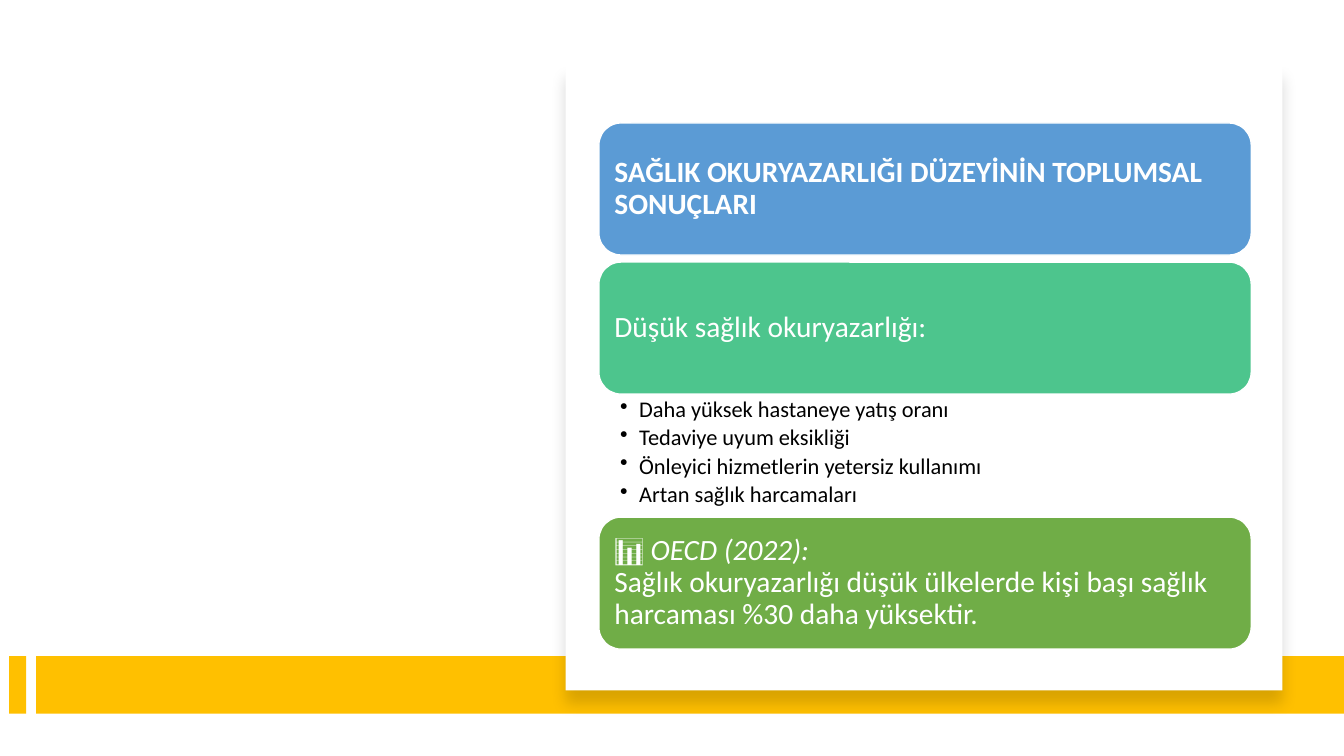
from dataclasses import dataclass

from lxml import etree
from pptx import Presentation
from pptx.dml.color import RGBColor
from pptx.enum.shapes import MSO_SHAPE
from pptx.enum.text import MSO_ANCHOR, PP_ALIGN
from pptx.oxml import parse_xml
from pptx.oxml.ns import nsdecls, qn
from pptx.util import Inches, Pt

RECTANGLE, ROUNDED = MSO_SHAPE.RECTANGLE, MSO_SHAPE.ROUNDED_RECTANGLE
TOP, MIDDLE = MSO_ANCHOR.TOP, MSO_ANCHOR.MIDDLE
LEFT = PP_ALIGN.LEFT


@dataclass(frozen=True)
class Theme:
    """Colours, font and type sizes of the slide."""
    font: str = "Calibri"
    white: str = "FFFFFF"
    black: str = "000000"
    gold: str = "FFC000"
    blue: str = "5B9BD5"
    teal: str = "4DC58D"
    green: str = "70AD47"
    heading_size: int = 21
    bullet_size: int = 16


THEME = Theme()
CARD_LEFT, CARD_WIDTH, CARD_HEIGHT = 5.94, 6.47, 1.31
BAND_TOP, BAND_HEIGHT = 6.51, 0.57
BULLETS = [
    "Daha yüksek hastaneye yatış oranı",
    "Tedaviye uyum eksikliği",
    "Önleyici hizmetlerin yetersiz kullanımı",
    "Artan sağlık harcamaları",
]
CARDS = [
    (1.22, THEME.blue, [("SAĞLIK OKURYAZARLIĞI DÜZEYİNİN TOPLUMSAL SONUÇLARI", {"bold": True})]),
    (2.6, THEME.teal, [("Düşük sağlık okuryazarlığı:", {})]),
    (5.13, THEME.green, [
        ("📊 ", {}),
        ("OECD (2022):", {"italic": True, "line_break": True}),
        ("Sağlık okuryazarlığı düşük ülkelerde kişi başı sağlık harcaması %30 daha yüksektir.", {}),
    ]),
]


def add_text(paragraph, text, size, color, bold=False, italic=False, line_break=False):
    """Append a formatted run to a paragraph."""
    run = paragraph.add_run()
    run.text = text
    run.font.name = THEME.font
    run.font.size = Pt(size)
    run.font.bold = bold
    run.font.italic = italic
    run.font.color.rgb = RGBColor.from_string(color)
    if line_break:
        paragraph.add_line_break()


def set_frame(frame, anchor, left, top, right, bottom):
    """Set wrapping, anchor and margins of a text frame."""
    frame.word_wrap = True
    frame.vertical_anchor = anchor
    frame.margin_left, frame.margin_top = Inches(left), Inches(top)
    frame.margin_right, frame.margin_bottom = Inches(right), Inches(bottom)


class SlideBuilder:
    """Draws styled elements on one slide."""

    def __init__(self, slide, theme):
        """Keep the slide and its theme."""
        self.slide = slide
        self.theme = theme

    def block(self, kind, left, top, width, height, fill):
        """Add a filled shape without an outline."""
        shape = self.slide.shapes.add_shape(
            kind, Inches(left), Inches(top), Inches(width), Inches(height))
        shape.shadow.inherit = False
        shape.fill.solid()
        shape.fill.fore_color.rgb = RGBColor.from_string(fill)
        shape.line.fill.background()
        return shape

    def panel(self, left, top, width, height):
        """Add a white panel with a soft shadow below it."""
        shape = self.block(RECTANGLE, left, top, width, height, self.theme.white)
        effects = shape._element.spPr.find(qn("a:effectLst"))
        effects.append(parse_xml(
            f'<a:outerShdw {nsdecls("a")} blurRad="{Pt(11)}" dist="{Pt(10)}" dir="5400000" '
            f'algn="t" rotWithShape="0"><a:srgbClr val="{self.theme.black}">'
            '<a:alpha val="15000"/></a:srgbClr></a:outerShdw>'))

    def card(self, top, fill, runs):
        """Add a rounded card with its text."""
        shape = self.block(ROUNDED, CARD_LEFT, top, CARD_WIDTH, CARD_HEIGHT, fill)
        shape.line.color.rgb = RGBColor.from_string(self.theme.white)
        shape.line.width = Pt(1)
        set_frame(shape.text_frame, MIDDLE, 0.09, 0.09, 0.09, 0.09)
        paragraph = shape.text_frame.paragraphs[0]
        paragraph.alignment = LEFT
        paragraph.line_spacing = 0.9
        for text, style in runs:
            add_text(paragraph, text, self.theme.heading_size, self.theme.white, **style)

    def bullets(self, left, top, width, height, items):
        """Add a bulleted list."""
        box = self.slide.shapes.add_textbox(
            Inches(left), Inches(top), Inches(width), Inches(height))
        frame = box.text_frame
        set_frame(frame, TOP, 0.21, 0.03, 0.16, 0.03)
        for index, item in enumerate(items):
            paragraph = frame.add_paragraph() if index else frame.paragraphs[0]
            paragraph.line_spacing = 0.9
            paragraph.space_after = Pt(3)
            properties = paragraph._p.get_or_add_pPr()
            properties.set("marL", str(Inches(0.19)))
            properties.set("indent", str(-Inches(0.19)))
            etree.SubElement(properties, qn("a:buChar")).set("char", "•")
            add_text(paragraph, item, self.theme.bullet_size, self.theme.black)


def main():
    """Build and save the presentation."""
    presentation = Presentation()
    presentation.slide_width, presentation.slide_height = Inches(13.33), Inches(7.5)
    slide = presentation.slides.add_slide(presentation.slide_layouts[6])
    builder = SlideBuilder(slide, THEME)
    for left, width in ((0.09, 0.17), (0.36, 12.97)):
        builder.block(RECTANGLE, left, BAND_TOP, width, BAND_HEIGHT, THEME.gold)
    builder.panel(5.61, 0.64, 7.11, 6.21)
    for top, fill, runs in CARDS:
        builder.card(top, fill, runs)
    builder.bullets(CARD_LEFT, 3.92, CARD_WIDTH, 1.21, BULLETS)
    presentation.save("out.pptx")


if __name__ == "__main__":
    main()
